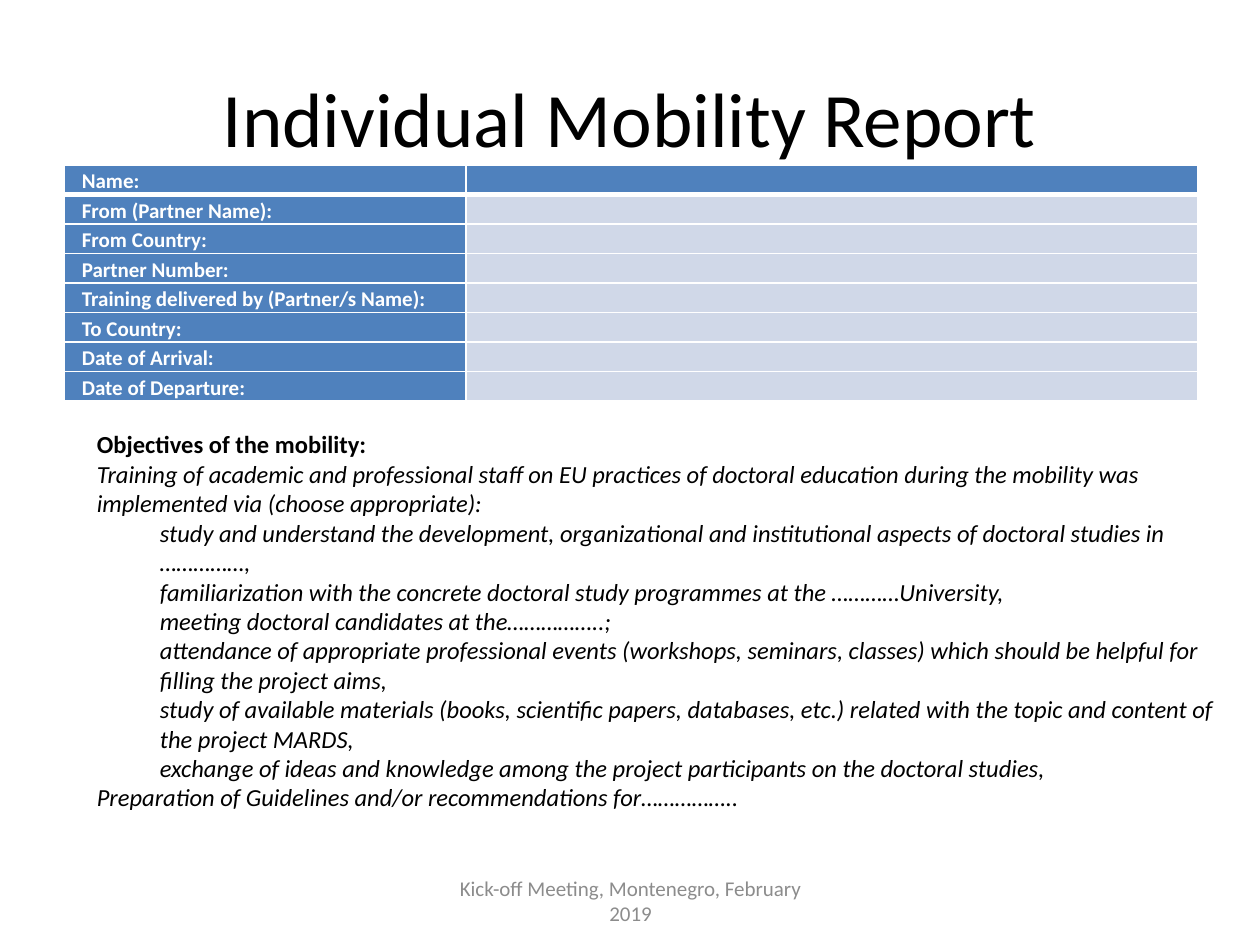
from dataclasses import dataclass

from pptx import Presentation
from pptx.dml.color import RGBColor
from pptx.enum.text import MSO_ANCHOR, PP_ALIGN
from pptx.oxml import parse_xml
from pptx.oxml.ns import nsdecls
from pptx.util import Inches, Pt

COLORS = {
    "black": "000000",
    "white": "FFFFFF",
    "grey": "8C8C8C",
    "blue": "4F81BD",
    "pale": "D0D8E8",
}
FONT = "Calibri"


@dataclass
class Frame:
    left: float
    top: float
    width: float
    height: float

    def lengths(self) -> tuple:
        return tuple(Inches(n) for n in (self.left, self.top, self.width, self.height))


@dataclass
class Line:
    text: str
    indent: float = 0
    bold: bool = False
    italic: bool = True


TABLE_LABELS = [
    "Name:",
    "From (Partner Name):",
    "From Country:",
    "Partner Number:",
    "Training delivered by (Partner/s Name):",
    "To Country:",
    "Date of Arrival:",
    "Date of Departure:",
]
COLUMN_WIDTHS = [3.19, 5.81]
ROW_HEIGHT = 0.23

ACTIVITIES = [
    "study and understand the development, organizational and institutional aspects of doctoral studies in ……………,",
    "familiarization with the concrete doctoral study programmes at the …………University,",
    "meeting doctoral candidates at the……………..;",
    "attendance of appropriate professional events (workshops, seminars, classes) which should be helpful for filling the project aims,",
    "study of available materials (books, scientific papers, databases, etc.) related with the topic and content of the project MARDS,",
    "exchange of ideas and knowledge among the project participants on the doctoral studies,",
]
OBJECTIVES = [
    Line("Objectives of the mobility:", bold=True, italic=False),
    Line("Training of academic and professional staff on EU practices of doctoral education during the mobility was implemented via (choose appropriate):"),
    *[Line(activity, indent=0.5) for activity in ACTIVITIES],
    Line("Preparation of\u00a0Guidelines and/or recommendations for……………..".replace("\u00a0", " ")),
]


def write(para, text: str, *, size: float, color: str = "black", bold: bool = False,
          italic: bool = False, align=PP_ALIGN.LEFT, indent: float = 0,
          spacing: float = 1.0) -> None:
    """Put formatted text into a paragraph."""
    para.alignment = align
    para.line_spacing = spacing
    if indent:
        properties = para._p.get_or_add_pPr()
        properties.set("marL", str(Inches(indent)))
        properties.set("indent", "0")
    para.font.size = Pt(size)
    if text:
        span = para.add_run()
        span.text = text
        span.font.name = FONT
        span.font.size = Pt(size)
        span.font.bold = bold
        span.font.italic = italic
        span.font.color.rgb = RGBColor.from_string(COLORS[color])


def add_box(page, frame: Frame, anchor=MSO_ANCHOR.TOP):
    box = page.shapes.add_textbox(*frame.lengths())
    box.text_frame.word_wrap = True
    box.text_frame.vertical_anchor = anchor
    return box


def style_cell(cell, fill: str, bottom: float, top: float) -> None:
    """Give a cell white borders, a fill and narrow margins."""
    properties = cell._tc.get_or_add_tcPr()
    for side, width in {"L": 1, "R": 1, "T": top, "B": bottom}.items():
        properties.append(parse_xml(
            f'<a:ln{side} {nsdecls("a")} w="{Pt(width)}"><a:solidFill>'
            f'<a:srgbClr val="{COLORS["white"]}"/></a:solidFill></a:ln{side}>'))
    cell.fill.solid()
    cell.fill.fore_color.rgb = RGBColor.from_string(COLORS[fill])
    cell.margin_left = cell.margin_right = Inches(0.14)
    cell.margin_top = cell.margin_bottom = 0


def add_form_table(page, frame: Frame) -> None:
    table = page.shapes.add_table(len(TABLE_LABELS), 2, *frame.lengths()).table
    for column, width in zip(table.columns, COLUMN_WIDTHS):
        column.width = Inches(width)
    for index, label in enumerate(TABLE_LABELS):
        table.rows[index].height = Inches(ROW_HEIGHT)
        answer_fill = "blue" if index == 0 else "pale"
        for column, (text, fill) in enumerate([(label, "blue"), ("", answer_fill)]):
            cell = table.cell(index, column)
            style_cell(cell, fill, bottom=3 if index == 0 else 1, top=3 if index == 1 else 1)
            write(cell.text_frame.paragraphs[0], text, size=12, color="white",
                  bold=True, spacing=1.15)


def main() -> None:
    deck = Presentation()
    deck.slide_width, deck.slide_height = Inches(10), Inches(7.5)
    page = deck.slides.add_slide(deck.slide_layouts[5])

    # Title
    title = page.shapes.title
    title.left, title.top, title.width, title.height = Frame(0.5, 0.3, 9, 1.25).lengths()
    title.text_frame.vertical_anchor = MSO_ANCHOR.MIDDLE
    write(title.text_frame.paragraphs[0], "Individual Mobility Report", size=44,
          align=PP_ALIGN.CENTER)

    # Form with the participant's details
    add_form_table(page, Frame(0.51, 1.31, sum(COLUMN_WIDTHS), ROW_HEIGHT * len(TABLE_LABELS)))

    # Footer
    footer = add_box(page, Frame(3.42, 6.95, 3.17, 0.4), MSO_ANCHOR.MIDDLE)
    write(footer.text_frame.paragraphs[0], "Kick-off Meeting, Montenegro, February 2019",
          size=12, color="grey", align=PP_ALIGN.CENTER)

    # Objectives
    text = add_box(page, Frame(0.67, 3.36, 9.21, 3.4)).text_frame
    for index, line in enumerate(OBJECTIVES):
        para = text.add_paragraph() if index else text.paragraphs[0]
        write(para, line.text, size=14, bold=line.bold, italic=line.italic, indent=line.indent)

    deck.save("out.pptx")


if __name__ == "__main__":
    main()
